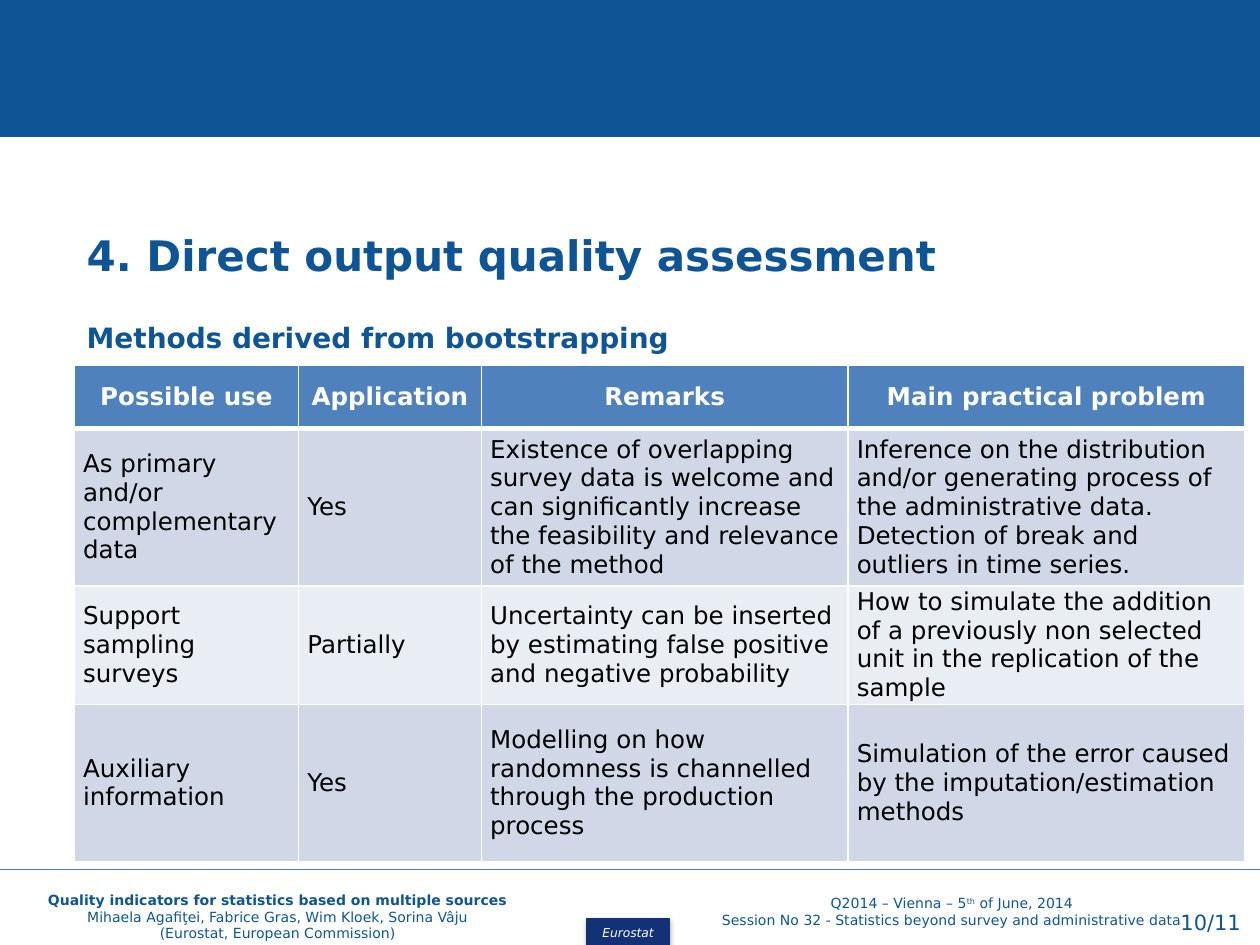
import pptx
import pptx.util
import pptx.dml.color
import pptx.enum.shapes
import pptx.enum.text
import pptx.oxml
import pptx.oxml.ns
from dataclasses import dataclass

Pt = pptx.util.Pt
ALIGN = pptx.enum.text.PP_ALIGN
MIDDLE = pptx.enum.text.MSO_ANCHOR.MIDDLE


@dataclass(frozen=True)
class Theme:
    font: str = "DejaVu Sans"
    blue: str = "0F5494"
    navy: str = "133176"
    rule: str = "4B7EBC"
    head: str = "4F81BD"
    odd: str = "D0D8E8"
    even: str = "E9EDF4"
    white: str = "FFFFFF"
    black: str = "000000"
    title: int = 24
    sub: int = 16
    body: int = 14
    page: int = 12
    foot: int = 8
    badge: int = 7


T = Theme()
WIDTH, HEIGHT = pptx.util.Inches(10), pptx.util.Inches(7.5)
COLS, ROWS = 100, 75

TABLE = [
    ["Possible use", "Application", "Remarks", "Main practical problem"],
    ["As primary and/or complementary data", "Yes",
     "Existence of overlapping survey data is welcome and can significantly "
     "increase the feasibility and relevance of the method",
     "Inference on the distribution and/or generating process of the "
     "administrative data. Detection of break and outliers in time series."],
    ["Support sampling surveys", "Partially",
     "Uncertainty can be inserted by estimating false positive and negative "
     "probability",
     "How to simulate the addition of a previously non selected unit in the "
     "replication of the sample"],
    ["Auxiliary information", "Yes",
     "Modelling on how randomness is channelled through the production process",
     "Simulation of the error caused by the imputation/estimation methods"],
]


def across(n):
    return round(WIDTH * n / COLS)


def down(n):
    return round(HEIGHT * n / ROWS)


def place(x, y, w, h):
    """Turn grid columns and rows into slide lengths."""
    return across(x), down(y), across(w), down(h)


def rgb(code):
    return pptx.dml.color.RGBColor.from_string(code)


def xml(body):
    """Parse one DrawingML element, given without its namespace."""
    tag, rest = body.split(" ", 1)
    return pptx.oxml.parse_xml(f"{tag} {pptx.oxml.ns.nsdecls('a')} {rest}")


def add_run(para, text, size, color, bold=False, italic=False, lift=0):
    run = para.add_run()
    run.text = text
    font = run.font
    font.name, font.size = T.font, Pt(size)
    font.bold, font.italic = bold, italic
    font.color.rgb = rgb(color)
    if lift:
        run._r.get_or_add_rPr().set("baseline", str(lift * 1000))


def add_text(slide, box, lines, size, align=ALIGN.LEFT, lead=1.5):
    """Each line is a list of (text, options); lead spaces the first line."""
    frame = slide.shapes.add_textbox(*place(*box)).text_frame
    frame.word_wrap = True
    for i, runs in enumerate(lines):
        para = frame.add_paragraph() if i else frame.paragraphs[0]
        para.alignment = align
        para.line_spacing = 1.0 if i else lead
        for text, opts in runs:
            add_run(para, text, size, T.blue, **opts)


def add_block(slide, box, color):
    kind = pptx.enum.shapes.MSO_SHAPE.RECTANGLE
    block = slide.shapes.add_shape(kind, *place(*box))
    block.shadow.inherit = False
    block.fill.solid()
    block.fill.fore_color.rgb = rgb(color)
    block.line.color.rgb = rgb(color)
    block.line.width = Pt(0.75)
    return block


def add_badge(slide, box, text):
    badge = add_block(slide, box, T.navy)
    glow = badge._element.spPr.find(pptx.oxml.ns.qn("a:effectLst"))
    glow.append(xml(
        f'<a:outerShdw blurRad="{Pt(3.1)}" dist="{Pt(1.8)}" dir="5400000" '
        f'rotWithShape="0"><a:srgbClr val="{T.black}"><a:alpha val="35000"/>'
        '</a:srgbClr></a:outerShdw>'))
    frame = badge.text_frame
    frame.vertical_anchor = MIDDLE
    frame.word_wrap = False
    para = frame.paragraphs[0]
    para.alignment = ALIGN.CENTER
    add_run(para, text, T.badge, T.white, italic=True)


def add_rule(slide, y, end):
    kind = pptx.enum.shapes.MSO_CONNECTOR.STRAIGHT
    rule = slide.shapes.add_connector(kind, 0, down(y), across(end), down(y))
    rule.line.color.rgb = rgb(T.rule)
    rule.line.width = Pt(0.75)
    rule._element.spPr.append(xml("<a:effectLst />"))


def edge(cell, widths):
    """Draw white borders; widths maps a side letter to points."""
    props = cell._tc.get_or_add_tcPr()
    for i, side in enumerate("LRTB"):
        props.insert(i, xml(
            f'<a:ln{side} w="{Pt(widths.get(side, 1))}"><a:solidFill>'
            f'<a:srgbClr val="{T.white}"/></a:solidFill></a:ln{side}>'))


def fill_cell(cell, text, row):
    head = row == 0
    cell.margin_left = cell.margin_right = across(0.7)
    cell.margin_top = cell.margin_bottom = 0
    cell.vertical_anchor = MIDDLE
    cell.fill.solid()
    cell.fill.fore_color.rgb = rgb(
        T.head if head else T.odd if row % 2 else T.even)
    edge(cell, {0: {"B": 3}, 1: {"T": 3}}.get(row, {}))
    para = cell.text_frame.paragraphs[0]
    para.alignment = ALIGN.CENTER if head else ALIGN.LEFT
    add_run(para, text, T.body, T.white if head else T.black, bold=head)


def add_grid(slide, x, y, wide, high, data):
    box = place(x, y, sum(wide), sum(high))
    table = slide.shapes.add_table(len(high), len(wide), *box).table
    for col, w in zip(table.columns, wide):
        col.width = across(w)
    for row, h in zip(table.rows, high):
        row.height = down(h)
    for r, texts in enumerate(data):
        for c, text in enumerate(texts):
            fill_cell(table.cell(r, c), text, r)


def main():
    deck = pptx.Presentation()
    deck.slide_width, deck.slide_height = WIDTH, HEIGHT
    slide = deck.slides.add_slide(deck.slide_layouts[6])
    bold, plain = {"bold": True}, {}

    add_block(slide, (0, 0, COLS, 10.8), T.blue)
    add_badge(slide, (46.6, 72.9, 6.5, 2.2), "Eurostat")
    add_text(slide, (5.9, 15.7, 95.3, 7.1),
             [[("4. Direct output quality assessment", bold)]], T.title)
    add_text(slide, (5.9, 23.6, 90.6, 5),
             [[("Methods derived from bootstrapping", bold)]], T.sub)
    add_grid(slide, 5.9, 29, [17.8, 14.5, 29.1, 31.5],
             [5, 12.5, 9.4, 12.5], TABLE)
    add_text(slide, (92.7, 70.7, 9.8, 4), [[("10/11", plain)]], T.page)
    add_rule(slide, 69, 100.4)
    add_text(slide, (0, 69.6, 44.1, 5.7), [
        [("Quality indicators for statistics based on multiple sources", bold)],
        [("Mihaela Agafiţei, Fabrice Gras, Wim Kloek, Sorina Vâju", plain)],
        [("(Eurostat, European Commission)", plain)],
    ], T.foot, ALIGN.CENTER)
    add_text(slide, (53.5, 70.5, 44.1, 3.7), [
        [("Q2014 – Vienna – 5", plain), ("th", {"lift": 30}),
         (" of June, 2014", plain)],
        [("Session No 32 - Statistics beyond survey and administrative data",
          plain)],
    ], T.foot, ALIGN.CENTER, lead=1.0)
    deck.save("out.pptx")


if __name__ == "__main__":
    main()
